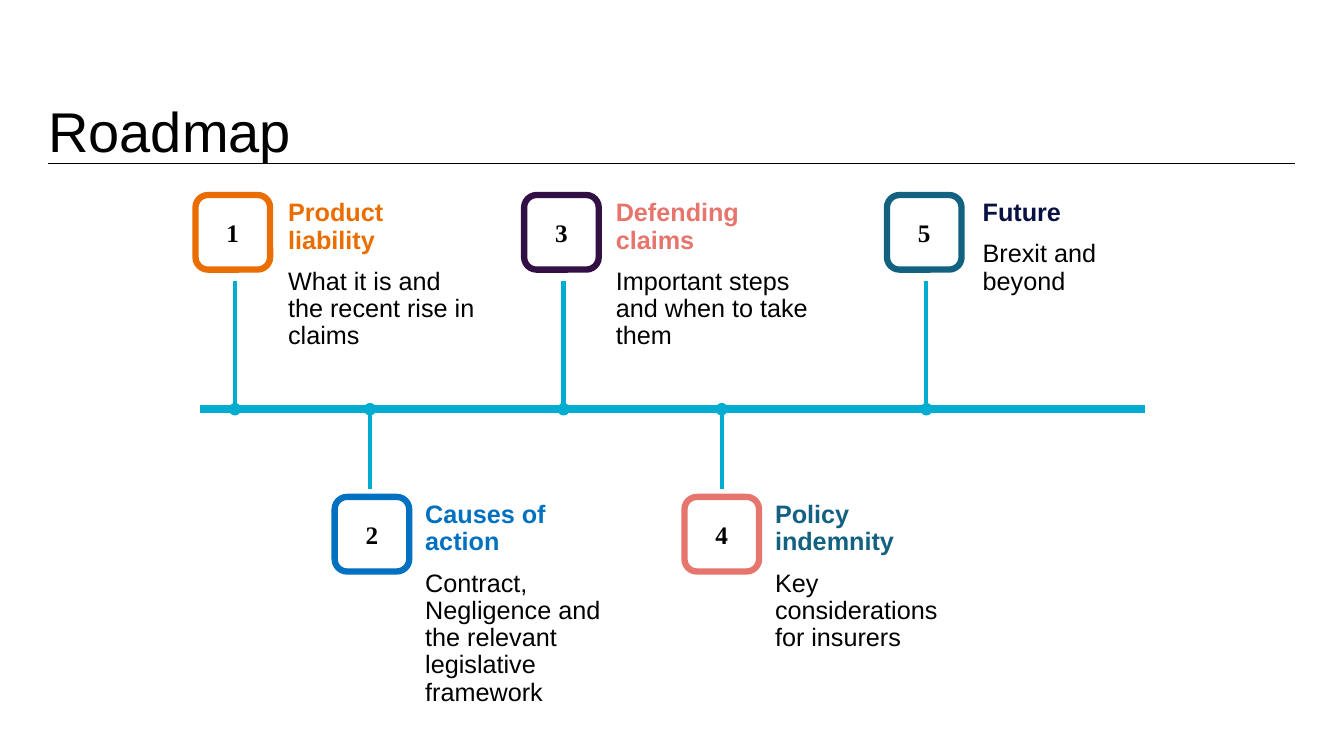
from dataclasses import dataclass

from lxml import etree
from pptx import Presentation
from pptx.dml.color import RGBColor
from pptx.enum.shapes import MSO_CONNECTOR, MSO_SHAPE
from pptx.enum.text import MSO_ANCHOR, PP_ALIGN
from pptx.oxml.ns import qn
from pptx.shapes.connector import Connector
from pptx.slide import Slide
from pptx.text.text import TextFrame
from pptx.util import Emu, Inches, Pt

STRAIGHT = MSO_CONNECTOR.STRAIGHT
ROUNDED = MSO_SHAPE.ROUNDED_RECTANGLE
LEFT, CENTER = PP_ALIGN.LEFT, PP_ALIGN.CENTER
TOP, MIDDLE, BOTTOM = MSO_ANCHOR.TOP, MSO_ANCHOR.MIDDLE, MSO_ANCHOR.BOTTOM

BLACK = RGBColor(0x00, 0x00, 0x00)
CYAN = RGBColor(0x00, 0xAD, 0xD1)
ORANGE = RGBColor(0xEA, 0x6D, 0x00)
BLUE = RGBColor(0x00, 0x70, 0xC0)
PURPLE = RGBColor(0x32, 0x10, 0x44)
CORAL = RGBColor(0xE5, 0x75, 0x6D)
TEAL = RGBColor(0x12, 0x61, 0x80)
NAVY = RGBColor(0x08, 0x11, 0x44)

SLIDE_WIDTH, SLIDE_HEIGHT = Inches(13.333), Inches(7.5)
MARGIN = 3.6
TITLE_RULE_Y = 21.6
AXIS_Y = 54.13
BADGE_WIDTH, BADGE_HEIGHT = 5.55, 9.87


@dataclass(frozen=True)
class Row:
    """A side of the timeline, in percent of the slide height."""

    top: float
    stem_end: float


UPPER = Row(top=25.8, stem_end=37.2)
LOWER = Row(top=65.73, stem_end=64.67)


@dataclass(frozen=True)
class Stop:
    """A numbered stop on the roadmap, with places in percent of the slide."""

    row: Row
    stem_x: float
    badge_left: float
    text_left: float
    text_width: float
    text_height: float
    badge_color: RGBColor
    heading_color: RGBColor
    heading: str
    detail: str


STOPS = [
    Stop(UPPER, 17.48, 14.55, 20.7, 15.53, 26.4, ORANGE, ORANGE,
         "Product liability", "What it is and the recent rise in claims"),
    Stop(LOWER, 27.53, 24.9, 30.9, 15.6, 23.07, BLUE, BLUE,
         "Causes of action",
         "Contract, Negligence and the relevant legislative framework"),
    Stop(UPPER, 41.93, 39, 45.08, 16.05, 24.13, PURPLE, CORAL,
         "Defending claims", "Important steps and when to take them"),
    Stop(LOWER, 53.7, 50.93, 56.93, 13.73, 25.2, CORAL, TEAL,
         "Policy indemnity", "Key considerations for insurers"),
    Stop(UPPER, 68.93, 66, 72.38, 14.78, 22.13, TEAL, NAVY,
         "Future", "Brexit and beyond"),
]


def across(percent: float) -> Emu:
    """Return a share of the slide width."""
    return Emu(round(SLIDE_WIDTH * percent / 100))


def down(percent: float) -> Emu:
    """Return a share of the slide height."""
    return Emu(round(SLIDE_HEIGHT * percent / 100))


def write_text(frame: TextFrame, text: str, *, size: float = 18,
               font: str = "Arial", color: RGBColor = BLACK,
               bold: bool = False, align: PP_ALIGN = LEFT,
               line_spacing: float = 1.0, space_before: float = 0) -> None:
    """Write a formatted paragraph after any text already in the frame."""
    paragraph = frame.add_paragraph() if frame.text else frame.paragraphs[0]
    paragraph.alignment = align
    paragraph.line_spacing = line_spacing
    paragraph.space_before = Pt(space_before)
    run = paragraph.add_run()
    run.text = text
    run.font.size = Pt(size)
    run.font.name = font
    run.font.bold = bold
    run.font.color.rgb = color


def add_text_frame(slide: Slide, left: float, top: float, width: float,
                   height: float, anchor: MSO_ANCHOR = TOP) -> TextFrame:
    """Add a wrapping text box and return its frame."""
    box = slide.shapes.add_textbox(
        across(left), down(top), across(width), down(height))
    frame = box.text_frame
    frame.word_wrap = True
    frame.vertical_anchor = anchor
    return frame


def add_line(slide: Slide, start: tuple[float, float],
             end: tuple[float, float], color: RGBColor,
             weight: float) -> Connector:
    """Draw a straight line without a shadow."""
    line = slide.shapes.add_connector(
        STRAIGHT, across(start[0]), down(start[1]),
        across(end[0]), down(end[1]))
    line.line.color.rgb = color
    line.line.width = Pt(weight)
    etree.SubElement(line.element.spPr, qn("a:effectLst"))
    return line


def add_title(slide: Slide) -> None:
    """Draw the title and the rule below it."""
    add_line(slide, (MARGIN, TITLE_RULE_Y), (96.38, TITLE_RULE_Y), BLACK, 0.5)
    frame = add_text_frame(slide, MARGIN, 3.2, 84.38, 18.4, BOTTOM)
    frame.margin_left = frame.margin_right = 0
    frame.margin_top = frame.margin_bottom = 0
    write_text(frame, "Roadmap", size=40, line_spacing=0.8)


def add_stem(slide: Slide, stop: Stop) -> None:
    """Draw the stem from a dot on the axis towards the badge."""
    stem = add_line(slide, (stop.stem_x, AXIS_Y),
                    (stop.stem_x, stop.row.stem_end), CYAN, 3)
    etree.SubElement(stem.line._get_or_add_ln(), qn("a:headEnd"), type="oval")


def add_badge(slide: Slide, stop: Stop, number: int) -> None:
    """Draw the numbered badge of a stop."""
    badge = slide.shapes.add_shape(
        ROUNDED, across(stop.badge_left), down(stop.row.top),
        across(BADGE_WIDTH), down(BADGE_HEIGHT))
    badge.shadow.inherit = False
    badge.fill.background()
    badge.line.color.rgb = stop.badge_color
    badge.line.width = Pt(4.5)
    badge.text_frame.vertical_anchor = MIDDLE
    write_text(badge.text_frame, str(number), font="Times New Roman",
               bold=True, align=CENTER)


def add_description(slide: Slide, stop: Stop) -> None:
    """Write the heading and detail of a stop."""
    frame = add_text_frame(slide, stop.text_left, stop.row.top,
                           stop.text_width, stop.text_height)
    write_text(frame, stop.heading, color=stop.heading_color, bold=True,
               line_spacing=0.9)
    write_text(frame, stop.detail, line_spacing=0.9, space_before=10)


def main() -> None:
    """Build and save the roadmap slide."""
    presentation = Presentation()
    presentation.slide_width = SLIDE_WIDTH
    presentation.slide_height = SLIDE_HEIGHT
    slide = presentation.slides.add_slide(presentation.slide_layouts[6])
    add_title(slide)
    add_line(slide, (14.85, AXIS_Y), (85.2, AXIS_Y), CYAN, 6)
    for number, stop in enumerate(STOPS, start=1):
        add_stem(slide, stop)
        add_badge(slide, stop, number)
        add_description(slide, stop)
    presentation.save("out.pptx")


if __name__ == "__main__":
    main()
